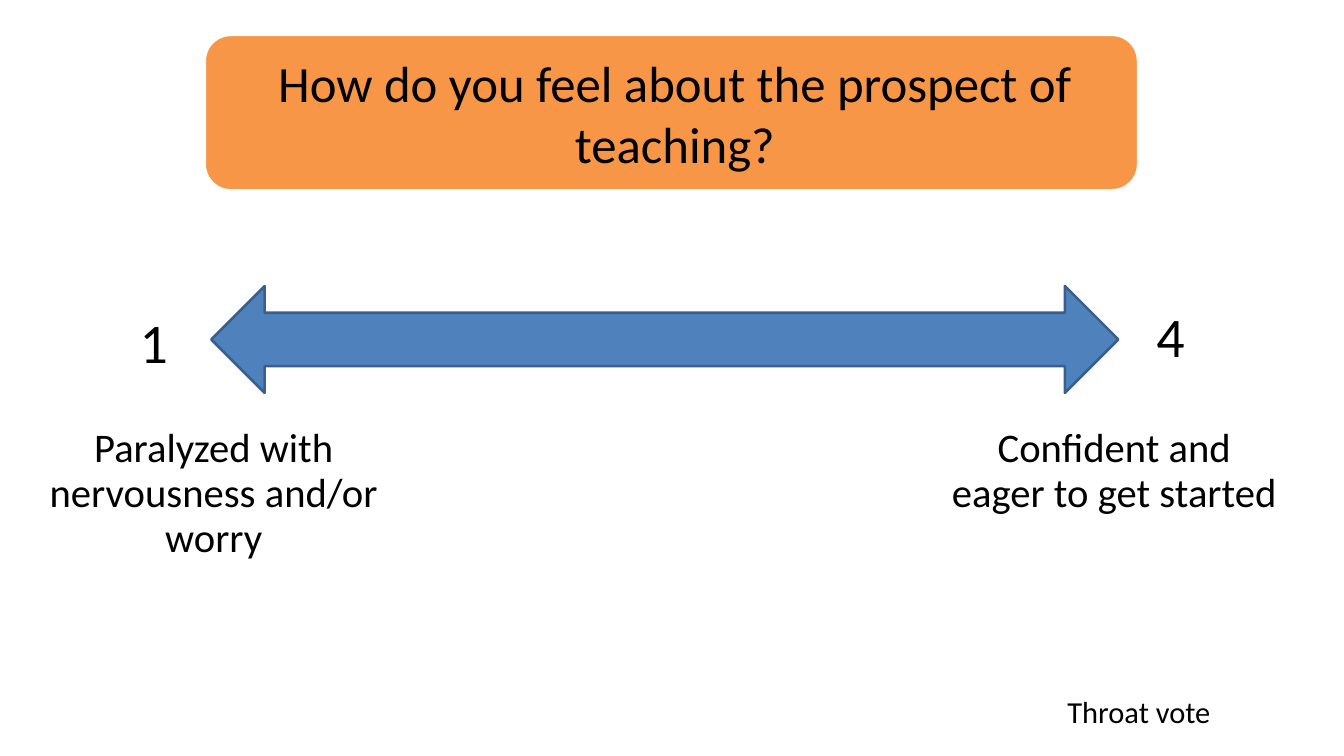
from pptx import Presentation
from pptx import util as u
from pptx.dml.color import RGBColor
from pptx.enum import shapes, text

COLORS = {
    "banner": "F79646",
    "banner_line": "FFFFFF",
    "arrow": "4F81BD",
    "arrow_line": "3A5F8C",
    "text": "000000",
}
FONT = "Calibri"


class SlideBuilder:
    """Holds the style and the current slide; lengths are in centimetres."""

    def __init__(self, slide, colors, font):
        self.slide = slide
        self.colors = colors
        self.font = font

    def color(self, name):
        return RGBColor.from_string(self.colors[name])

    def add_shape(self, kind, box, fill, line):
        shape = self.slide.shapes.add_shape(kind, *map(u.Cm, box))
        shape.shadow.inherit = False
        shape.fill.solid()
        shape.fill.fore_color.rgb = self.color(fill)
        shape.line.color.rgb = self.color(line)
        shape.line.width = u.Pt(2)
        return shape

    def add_text(self, words, box, size, align=text.PP_ALIGN.LEFT,
                 anchor=text.MSO_ANCHOR.TOP, spacing=1.0, insets=(0.25, 0.13)):
        shape = self.slide.shapes.add_textbox(*map(u.Cm, box))
        frame = shape.text_frame
        frame.word_wrap = True
        frame.vertical_anchor = anchor
        frame.margin_left = frame.margin_right = u.Cm(insets[0])
        frame.margin_top = frame.margin_bottom = u.Cm(insets[1])
        paragraph = frame.paragraphs[0]
        paragraph.alignment = align
        paragraph.line_spacing = spacing
        run = paragraph.add_run()
        run.text = words
        run.font.name = self.font
        run.font.size = u.Pt(size)
        run.font.color.rgb = self.color("text")
        return shape


def main():
    presentation = Presentation()
    presentation.slide_width = u.Cm(37.34)
    presentation.slide_height = u.Cm(21.01)
    slide = presentation.slides.add_slide(presentation.slide_layouts[6])
    builder = SlideBuilder(slide, COLORS, FONT)
    center = text.PP_ALIGN.CENTER
    wide_insets = (0.28, 0.15)

    # Question banner
    builder.add_shape(shapes.MSO_SHAPE.ROUNDED_RECTANGLE,
                      (5.69, 0.97, 25.93, 4.32), "banner", "banner_line")
    builder.add_text("How do you feel about the prospect of teaching?",
                     (6.43, 0.97, 24.64, 4.01), 40, center,
                     text.MSO_ANCHOR.BOTTOM, insets=wide_insets)

    # Scale arrow
    builder.add_shape(shapes.MSO_SHAPE.LEFT_RIGHT_ARROW,
                      (5.87, 7.95, 25.2, 2.97), "arrow", "arrow_line")

    # Scale ends: number beside the arrow, meaning below it
    scale_ends = [
        ("1", 3.63, 8.59, "Paralyzed with nervousness and/or worry", 1.09, 4.06),
        ("4", 31.88, 8.43, "Confident and eager to get started", 26.11, 2.79),
    ]
    for number, left, top, meaning, meaning_left, height in scale_ends:
        builder.add_text(number, (left, top, 1.4, 2), 44, spacing=0.93)
        builder.add_text(meaning, (meaning_left, 11.71, 9.7, height), 32,
                         center, spacing=0.93)

    # Voting method
    builder.add_text("Throat vote", (29.26, 19.1, 4.65, 1.35), 24,
                     text.PP_ALIGN.RIGHT, insets=wide_insets)

    presentation.save("out.pptx")


if __name__ == "__main__":
    main()
